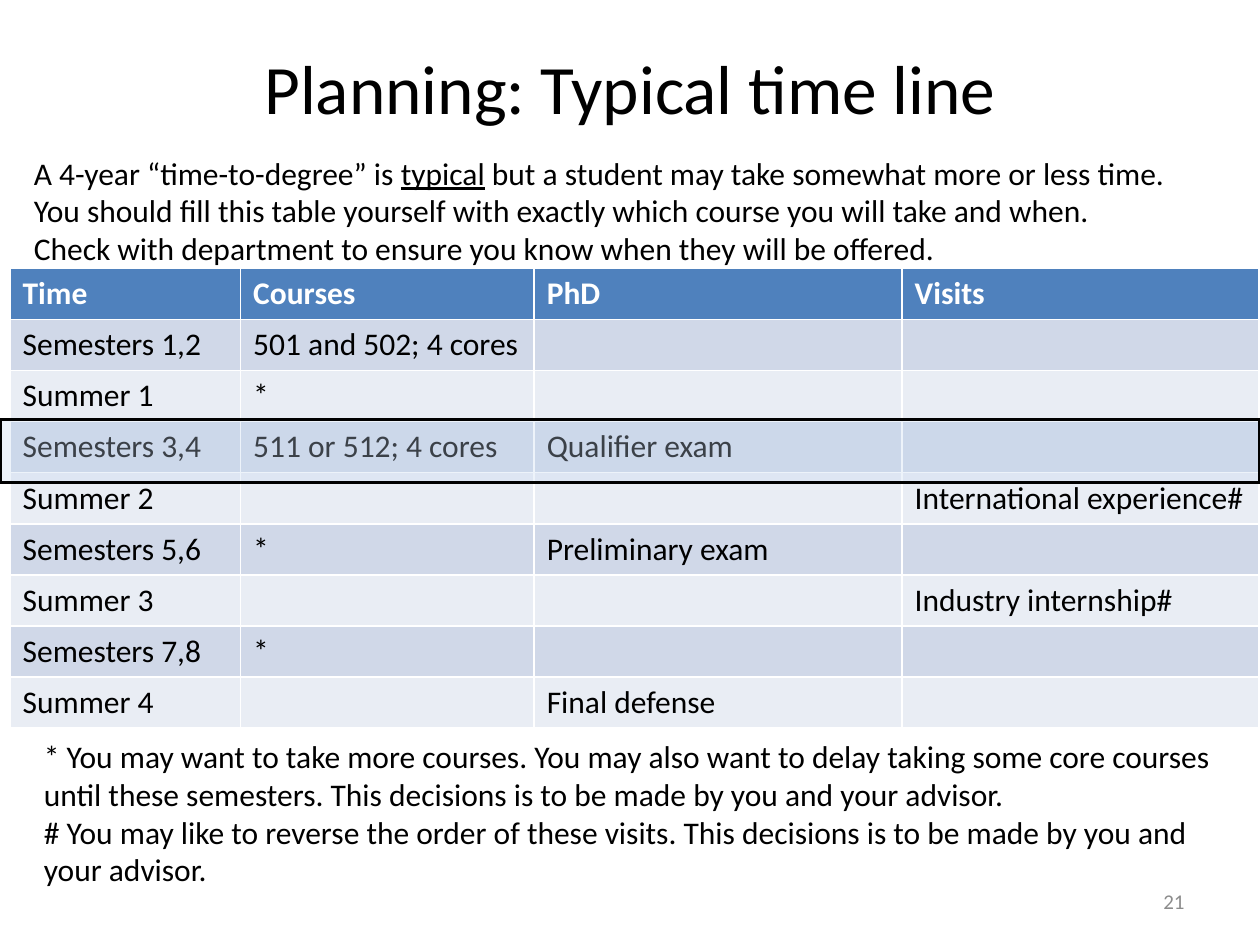
import pptx
import pptx.dml.color
import pptx.enum.shapes
import pptx.enum.text
import pptx.oxml
import pptx.oxml.ns
import pptx.util
from dataclasses import dataclass

Inches = pptx.util.Inches
Pt = pptx.util.Pt
Align = pptx.enum.text.PP_ALIGN
Anchor = pptx.enum.text.MSO_ANCHOR


@dataclass(frozen=True)
class Theme:
    font: str = "Calibri"
    title_size: float = 39.6
    body_size: float = 18
    number_size: float = 12
    text: str = "000000"
    muted: str = "8C8C8C"
    white: str = "FFFFFF"
    header: str = "4F81BD"
    bands: tuple = ("D0D8E8", "E9EDF4")
    highlight: str = "C6D9F1"
    highlight_opacity: float = 0.3


THEME = Theme()

TITLE = "Planning: Typical time line"
# A paragraph is a string, or a list of (text, underlined) runs.
INTRO = [
    [("A 4-year “time-to-degree” is ", False), ("typical", True),
     (" but a student may take somewhat more or less time.", False)],
    "You should fill this table yourself with exactly which course you will take and when.",
    "Check with department to ensure you know when they will be offered.",
]
TIMELINE = [
    ("Time", "Courses", "PhD", "Visits"),
    ("Semesters 1,2", "501 and 502; 4 cores", "", ""),
    ("Summer 1", "*", "", ""),
    ("Semesters 3,4", "511 or 512; 4 cores", "Qualifier exam", ""),
    ("Summer 2", "", "", "International experience#"),
    ("Semesters 5,6", "*", "Preliminary exam", ""),
    ("Summer 3", "", "", "Industry internship#"),
    ("Semesters 7,8", "*", "", ""),
    ("Summer 4", "", "Final defense", ""),
]
FOOTNOTES = [
    "* You may want to take more courses. You may also want to delay taking some core "
    "courses until these semesters. This decisions is to be made by you and your advisor.",
    "# You may like to reverse the order of these visits. This decisions is to be made "
    "by you and your advisor.",
]
PAGE_NUMBER = "21"
COLUMN_WIDTHS = (1.83, 2.33, 2.92, 2.83)
ROW_HEIGHT = 0.405


def color(value):
    return pptx.dml.color.RGBColor.from_string(value)


def write_text(frame, paragraphs, size=THEME.body_size, fill=THEME.text, bold=False,
               align=Align.LEFT, anchor=Anchor.TOP):
    frame.word_wrap = True
    frame.auto_size = pptx.enum.text.MSO_AUTO_SIZE.NONE
    frame.vertical_anchor = anchor
    for index, content in enumerate(paragraphs):
        paragraph = frame.add_paragraph() if index else frame.paragraphs[0]
        paragraph.alignment = align
        runs = [(content, False)] if isinstance(content, str) else content
        for text, underlined in runs:
            run = paragraph.add_run()
            run.text = text
            run.font.name = THEME.font
            run.font.size = Pt(size)
            run.font.bold = bold
            run.font.underline = underlined
            run.font.color.rgb = color(fill)


def add_text(slide, box, paragraphs, **text_format):
    shape = slide.shapes.add_textbox(*map(Inches, box))
    write_text(shape.text_frame, paragraphs, **text_format)


def add_title(slide):
    title = slide.shapes.title
    title.left, title.top, title.width, title.height = map(Inches, (0.5, 0.3, 9, 0.78))
    write_text(title.text_frame, [TITLE], size=THEME.title_size,
               align=Align.CENTER, anchor=Anchor.MIDDLE)


def add_timeline(slide):
    table = slide.shapes.add_table(
        len(TIMELINE), len(COLUMN_WIDTHS), Inches(0.08), Inches(2.13),
        Inches(sum(COLUMN_WIDTHS)), Inches(ROW_HEIGHT * len(TIMELINE))).table
    for column, width in zip(table.columns, COLUMN_WIDTHS):
        column.width = Inches(width)
    for row_index, values in enumerate(TIMELINE):
        is_header = row_index == 0
        table.rows[row_index].height = Inches(ROW_HEIGHT)
        background = THEME.header if is_header else THEME.bands[(row_index - 1) % 2]
        for column_index, value in enumerate(values):
            cell = table.cell(row_index, column_index)
            cell.fill.solid()
            cell.fill.fore_color.rgb = color(background)
            if value:
                write_text(cell.text_frame, [value], bold=is_header,
                           fill=THEME.white if is_header else THEME.text)


def add_highlight(slide):
    """Frame the current stage with a translucent bar."""
    bar = slide.shapes.add_shape(
        pptx.enum.shapes.MSO_SHAPE.RECTANGLE, *map(Inches, (0, 3.33, 10, 0.5)))
    bar.shadow.inherit = False
    bar.fill.solid()
    bar.fill.fore_color.rgb = color(THEME.highlight)
    bar.line.color.rgb = color(THEME.text)
    bar.line.width = Pt(2)
    fill_color = bar.fill._xPr.find(
        "/".join(map(pptx.oxml.ns.qn, ("a:solidFill", "a:srgbClr"))))
    alpha = pptx.oxml.parse_xml(f"<a:alpha {pptx.oxml.ns.nsdecls('a')}/>")
    alpha.set("val", str(round(THEME.highlight_opacity * 100000)))
    fill_color.append(alpha)


def main():
    presentation = pptx.Presentation()
    presentation.slide_width, presentation.slide_height = Inches(10), Inches(7.5)
    slide = presentation.slides.add_slide(presentation.slide_layouts[5])
    add_title(slide)
    add_text(slide, (7.17, 6.95, 2.33, 0.4), [PAGE_NUMBER], size=THEME.number_size,
             fill=THEME.muted, align=Align.RIGHT, anchor=Anchor.MIDDLE)
    add_timeline(slide)
    add_text(slide, (0.25, 5.8, 9.5, 1.31), FOOTNOTES)
    add_text(slide, (0.17, 1.17, 9.75, 1.01), INTRO)
    add_highlight(slide)
    presentation.save("out.pptx")


if __name__ == "__main__":
    main()
